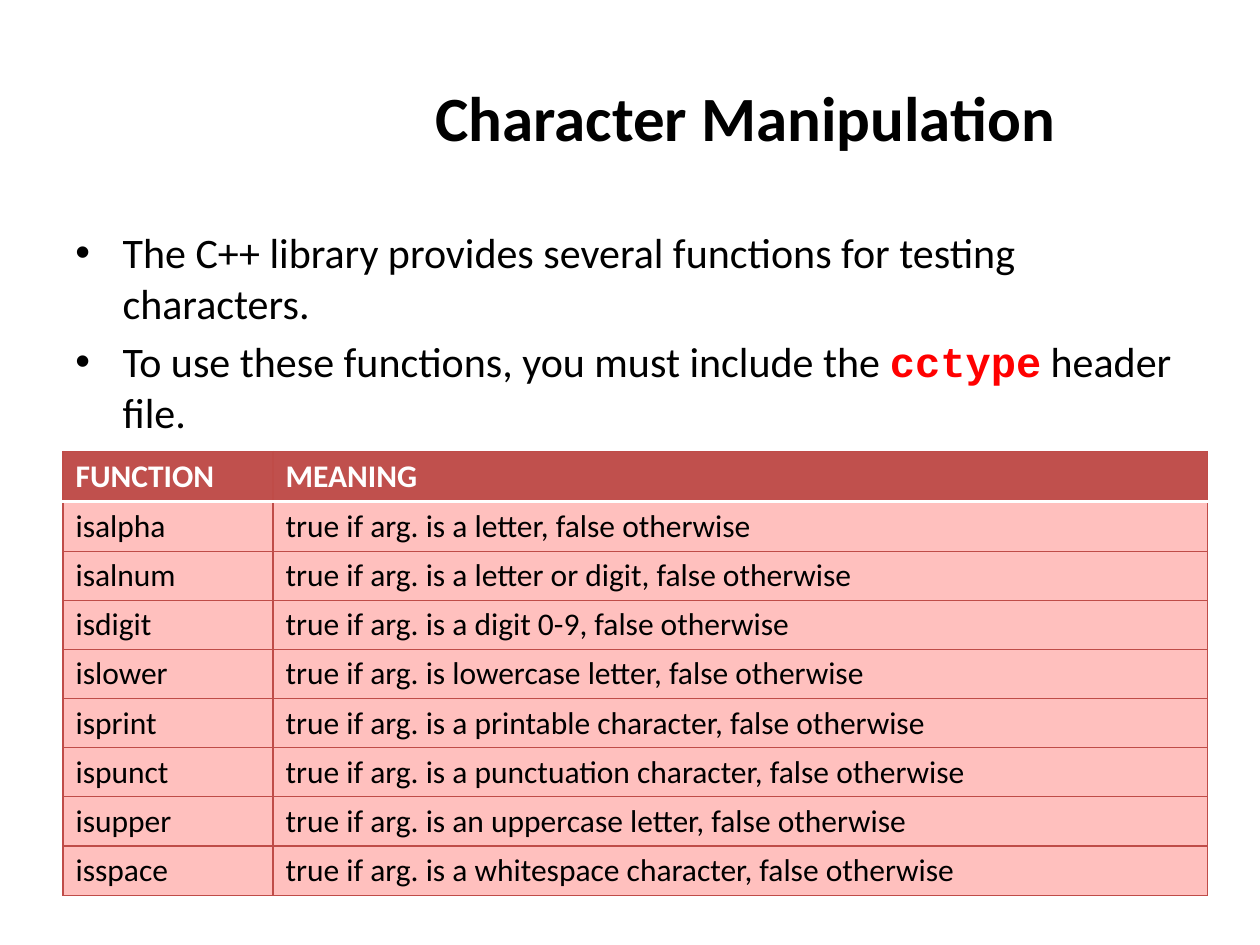
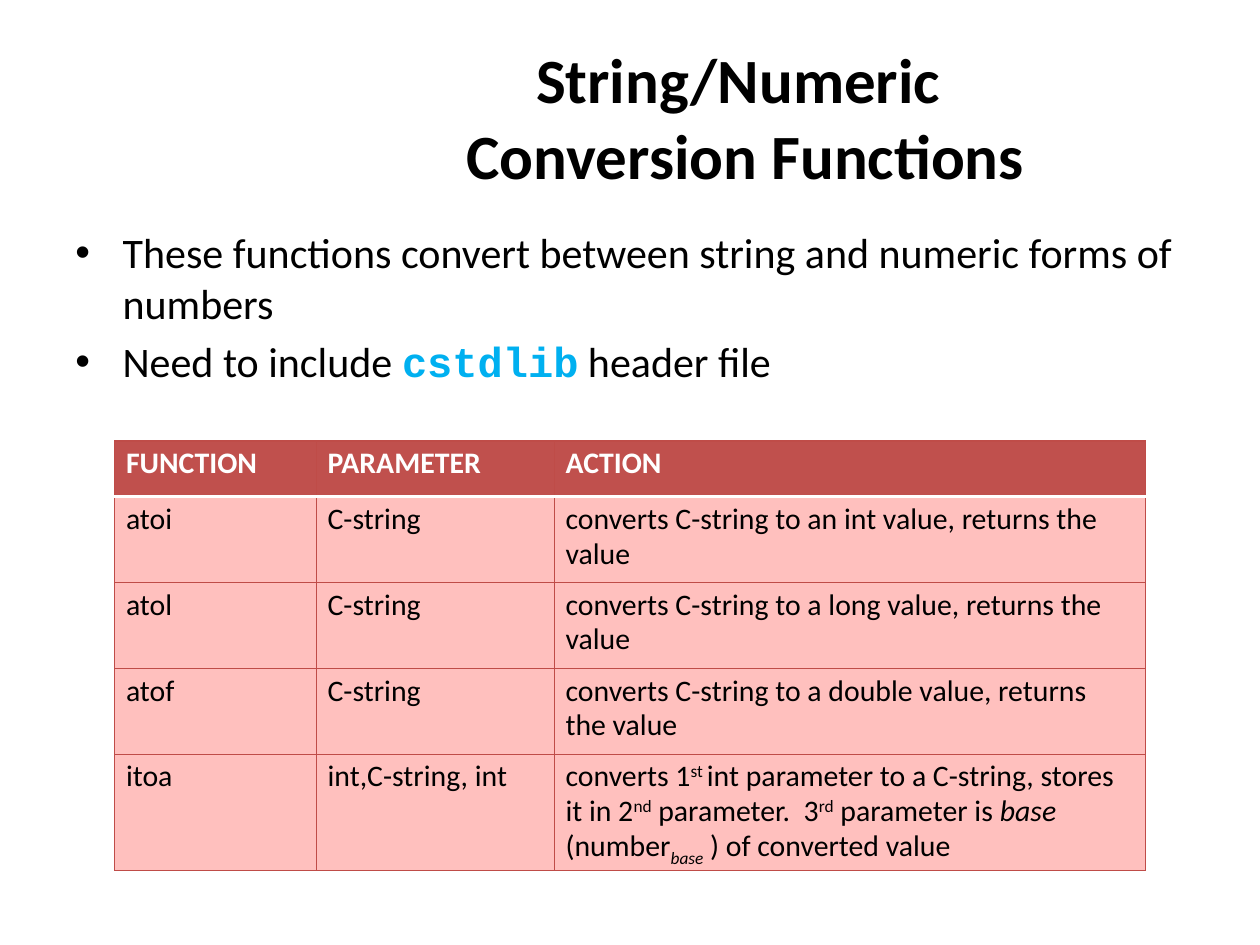
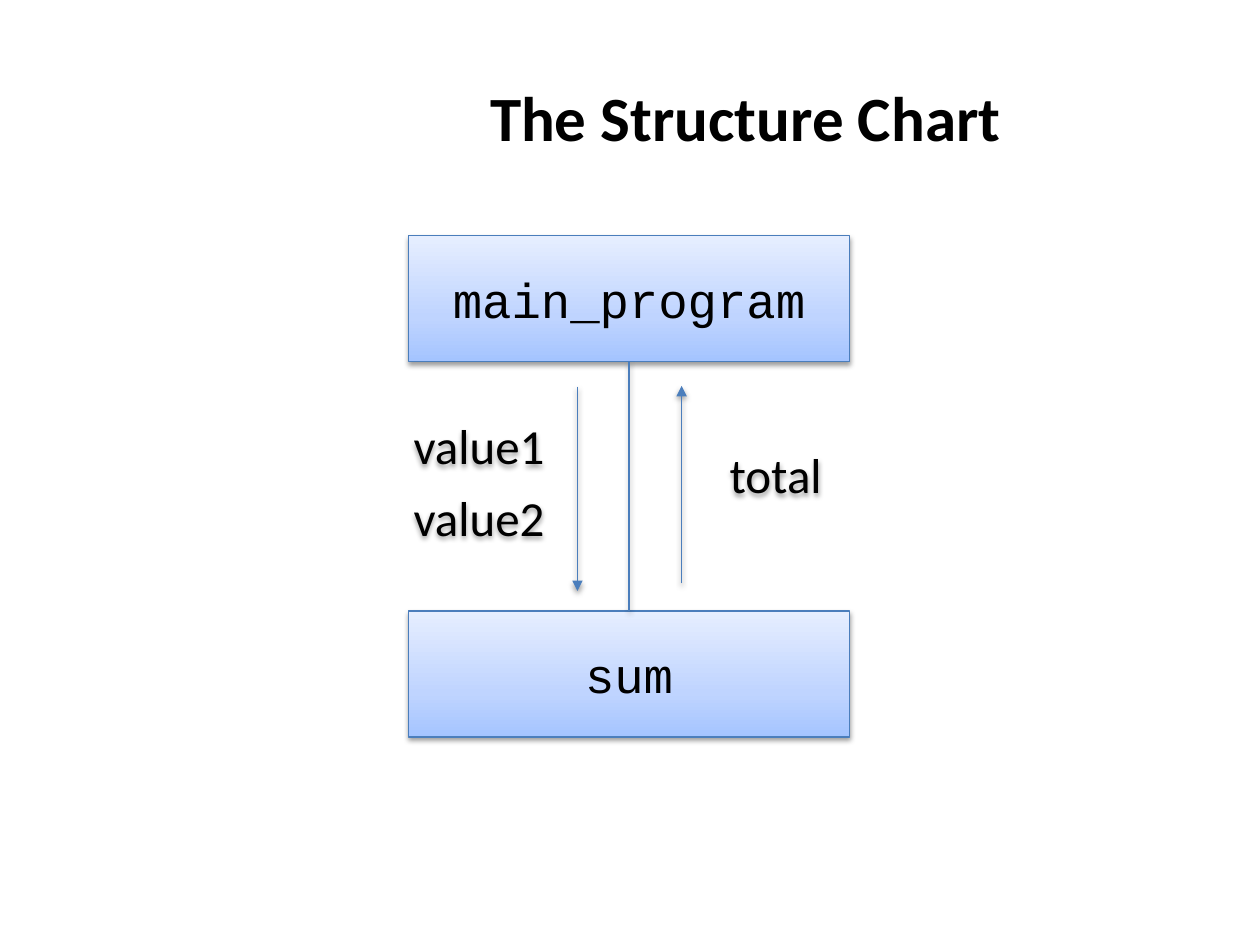
"""Build three slides on C++ character functions, conversions and a structure chart."""
import copy

import lxml.etree
import pptx
import pptx.dml.color
import pptx.enum.shapes
import pptx.enum.text
import pptx.oxml.ns
import pptx.util

Pt = pptx.util.Pt
RGBColor = pptx.dml.color.RGBColor
qn = pptx.oxml.ns.qn
CENTER = pptx.enum.text.PP_ALIGN.CENTER
MIDDLE = pptx.enum.text.MSO_ANCHOR.MIDDLE

BLACK = RGBColor(0, 0, 0)
WHITE = RGBColor(255, 255, 255)
RED = RGBColor(255, 0, 0)
SKY = RGBColor(0x00, 0xB0, 0xF0)
HEADER = RGBColor(0xC0, 0x50, 0x4D)
BORDER = RGBColor(0xBF, 0x4C, 0x48)
PINK = RGBColor(0xFF, 0xC0, 0xBE)
OUTLINE = RGBColor(0x4B, 0x7E, 0xBC)
GRADIENT = [
    (0, RGBColor(0xA4, 0xC4, 0xFF)),
    (0.35, RGBColor(0xBF, 0xD4, 0xFF)),
    (1, RGBColor(0xE6, 0xEE, 0xFF)),
]
SANS, MONO = "Calibri", "Courier New"

STYLES = {
    "plain": {},
    "red code": {"font": MONO, "color": RED, "bold": True},
    "blue code": {"font": MONO, "color": SKY, "bold": True},
    "raised": {"baseline": 30},
    "italic": {"italic": True},
    "lowered": {"italic": True, "baseline": -25},
}

TABLE_SLIDES = [
    {
        "title": "Character Manipulation",
        "bullets": [
            "The C++ library provides several functions for testing characters.",
            [("To use these functions, you must include the ", "plain"),
             ("cctype", "red code"), (" header file.", "plain")],
        ],
        "at": (36, 258), "size": 18, "margins": (7.2, 3.6),
        "columns": [120, 534], "heights": [28.8] + [28.1] * 8,
        "rows": [
            ("FUNCTION", "MEANING"),
            ("isalpha", "true if arg. is a letter, false otherwise"),
            ("isalnum", "true if arg. is a letter or digit, false otherwise"),
            ("isdigit", "true if arg. is a digit 0-9, false otherwise"),
            ("islower", "true if arg. is lowercase letter, false otherwise"),
            ("isprint", "true if arg. is a printable character, false otherwise"),
            ("ispunct", "true if arg. is a punctuation character, false otherwise"),
            ("isupper", "true if arg. is an uppercase letter, false otherwise"),
            ("isspace", "true if arg. is a whitespace character, false otherwise"),
        ],
    },
    {
        "title": "String/Numeric \nConversion Functions",
        "bullets": [
            "These functions convert between string and numeric forms of numbers",
            [("Need to include ", "plain"), ("cstdlib", "blue code"),
             (" header file", "plain")],
        ],
        "at": (65.5, 252), "size": 17, "margins": (6.5, 2.9),
        "columns": [115.2, 136, 337.8], "heights": [32, 49, 49, 49, 64],
        "rows": [
            ("FUNCTION", "PARAMETER", "ACTION"),
            ("atoi", "C-string", "converts C-string to an int value, returns the value"),
            ("atol", "C-string", "converts C-string to a long value, returns the value"),
            ("atof", "C-string", "converts C-string to a double value, returns the value"),
            ("itoa", "int,C-string, int", [
                ("converts 1", "plain"), ("st ", "raised"),
                ("int parameter to a C-string, stores it in 2", "plain"),
                ("nd", "raised"), (" parameter.  3", "plain"), ("rd", "raised"),
                (" parameter is ", "plain"), ("base", "italic"),
                (" (number", "plain"), ("base", "lowered"),
                (" ) of converted value", "plain"),
            ]),
        ],
    },
]

CHART_TITLE = "The Structure Chart"
MODULES = [("main_program", 134.6), ("sum", 349.2)]
LABELS = [
    ("value1", 216.5, 234, 114.5),
    ("value2", 216.5, 275, 114.5),
    ("total", 397.5, 250.5, 91.5),
]
ARROWS = [(330, 221, 337.7), (389.5, 333.4, 220.5)]


def write(para, content, size, font=SANS, color=BLACK, bold=False):
    """Put plain or styled text in a paragraph."""
    if isinstance(content, str):
        para.text = content
        styles = ["plain"] * len(para.runs)
    else:
        for words, style in content:
            para.add_run().text = words
        styles = [style for words, style in content]
    for span, name in zip(para.runs, styles):
        style = STYLES[name]
        span.font.name = style.get("font", font)
        span.font.size = Pt(size)
        span.font.bold = style.get("bold", bold)
        span.font.italic = style.get("italic", False)
        span.font.color.rgb = style.get("color", color)
        if "baseline" in style:
            span.font._element.set("baseline", str(style["baseline"] * 1000))


def add_page(deck, title):
    """Add a slide with the shared title style."""
    page = deck.slides.add_slide(deck.slide_layouts[5])
    box = page.shapes.title
    box.left, box.top, box.width, box.height = Pt(168), Pt(21.6), Pt(516), Pt(90)
    frame = box.text_frame
    frame.auto_size = pptx.enum.text.MSO_AUTO_SIZE.NONE
    frame.vertical_anchor = MIDDLE
    para = frame.paragraphs[0]
    write(para, title, 36, bold=True)
    para.alignment = CENTER
    return page


def add_bullets(page, bullets):
    """Add the bulleted text under the title."""
    box = page.shapes.add_textbox(Pt(36), Pt(126), Pt(648), Pt(356.4))
    frame = box.text_frame
    frame.word_wrap = True
    for index, content in enumerate(bullets):
        para = frame.add_paragraph() if index else frame.paragraphs[0]
        settings = para._p.get_or_add_pPr()
        settings.set("marL", str(Pt(27)))
        settings.set("indent", str(-Pt(27)))
        lxml.etree.SubElement(settings, qn("a:buFont")).set("typeface", "Arial")
        lxml.etree.SubElement(settings, qn("a:buChar")).set("char", "•")
        if index:
            para.space_before = Pt(4.8)
        write(para, content, 24)


def add_border(cell, side, color, width):
    """Draw one side of a table cell."""
    settings = cell._tc.get_or_add_tcPr()
    line = lxml.etree.SubElement(settings, qn("a:ln" + side), w=str(Pt(width)))
    fill = lxml.etree.SubElement(line, qn("a:solidFill"))
    lxml.etree.SubElement(fill, qn("a:srgbClr"), val=str(color))


def add_grid(page, content):
    """Add the function table."""
    rows, columns, heights = content["rows"], content["columns"], content["heights"]
    left, top = content["at"]
    table = page.shapes.add_table(
        len(rows), len(columns), Pt(left), Pt(top), Pt(sum(columns)), Pt(sum(heights))
    ).table
    for column, width in zip(table.columns, columns):
        column.width = Pt(width)
    side_margin, end_margin = content["margins"]
    for r, (row, height) in enumerate(zip(rows, heights)):
        table.rows[r].height = Pt(height)
        for c, words in enumerate(row):
            cell = table.cell(r, c)
            cell.margin_left = cell.margin_right = Pt(side_margin)
            cell.margin_top = cell.margin_bottom = Pt(end_margin)
            for side in "LRTB":
                divider = (r, side) in [(0, "B"), (1, "T")]
                add_border(cell, side, WHITE if divider else BORDER, 2 if divider else 0.75)
            cell.fill.solid()
            cell.fill.fore_color.rgb = PINK if r else HEADER
            para = cell.text_frame.paragraphs[0]
            para.line_spacing = 0.95
            write(para, words, content["size"], color=BLACK if r else WHITE, bold=r == 0)


def add_shadow(shape):
    """Give a shape the soft shadow of the chart."""
    effects = lxml.etree.SubElement(shape._element.spPr, qn("a:effectLst"))
    shadow = lxml.etree.SubElement(
        effects, qn("a:outerShdw"), blurRad=str(Pt(3.1)), dist=str(Pt(1.6)),
        dir="5400000", rotWithShape="0",
    )
    color = lxml.etree.SubElement(shadow, qn("a:srgbClr"), val=str(BLACK))
    lxml.etree.SubElement(color, qn("a:alpha"), val="38000")


def write_centered(box, words, font):
    """Write the large centred text of the chart."""
    box.text_frame.word_wrap = True
    para = box.text_frame.paragraphs[0]
    write(para, words, 28, font)
    para.alignment = CENTER
    para.space_after = Pt(10)


def add_module(page, name, top):
    """Add one module box."""
    box = page.shapes.add_shape(
        pptx.enum.shapes.MSO_SHAPE.FLOWCHART_PROCESS, Pt(233.5), Pt(top), Pt(252), Pt(72)
    )
    box.fill.gradient()
    box.fill.gradient_angle = 90
    stops = box._element.spPr.find(".//" + qn("a:gsLst"))
    stops.append(copy.deepcopy(stops[0]))
    for stop, (position, color) in zip(box.fill.gradient_stops, GRADIENT):
        stop.position = position
        stop.color.rgb = color
    box.line.color.rgb = OUTLINE
    box.line.width = Pt(0.75)
    add_shadow(box)
    box.text_frame.vertical_anchor = MIDDLE
    write_centered(box, name, MONO)
    return box


def add_line(page, x, start, end, arrow=False):
    """Add a vertical line, with an arrowhead at its end if asked."""
    line = page.shapes.add_connector(
        pptx.enum.shapes.MSO_CONNECTOR.STRAIGHT, Pt(x), Pt(start), Pt(x), Pt(end)
    )
    line.line.color.rgb = OUTLINE
    line.line.width = Pt(0.75)
    if arrow:
        outline = line._element.spPr.find(qn("a:ln"))
        lxml.etree.SubElement(outline, qn("a:tailEnd"), type="triangle")
    add_shadow(line)
    return line


def add_structure_chart(page):
    """Add the modules, the link between them and the data passed."""
    caller, callee = [add_module(page, name, top) for name, top in MODULES]
    link = add_line(page, 359.5, 206.6, 349.2)
    link.begin_connect(caller, 2)
    link.end_connect(callee, 0)
    for x, start, end in ARROWS:
        add_line(page, x, start, end, arrow=True)
    for words, left, top, width in LABELS:
        box = page.shapes.add_textbox(Pt(left), Pt(top), Pt(width), Pt(41))
        box.fill.background()
        add_shadow(box)
        write_centered(box, words, SANS)


def main():
    """Build and save the deck."""
    deck = pptx.Presentation()
    deck.slide_width, deck.slide_height = Pt(720), Pt(540)
    for content in TABLE_SLIDES:
        page = add_page(deck, content["title"])
        add_bullets(page, content["bullets"])
        add_grid(page, content)
    add_structure_chart(add_page(deck, CHART_TITLE))
    deck.save("out.pptx")


if __name__ == "__main__":
    main()
